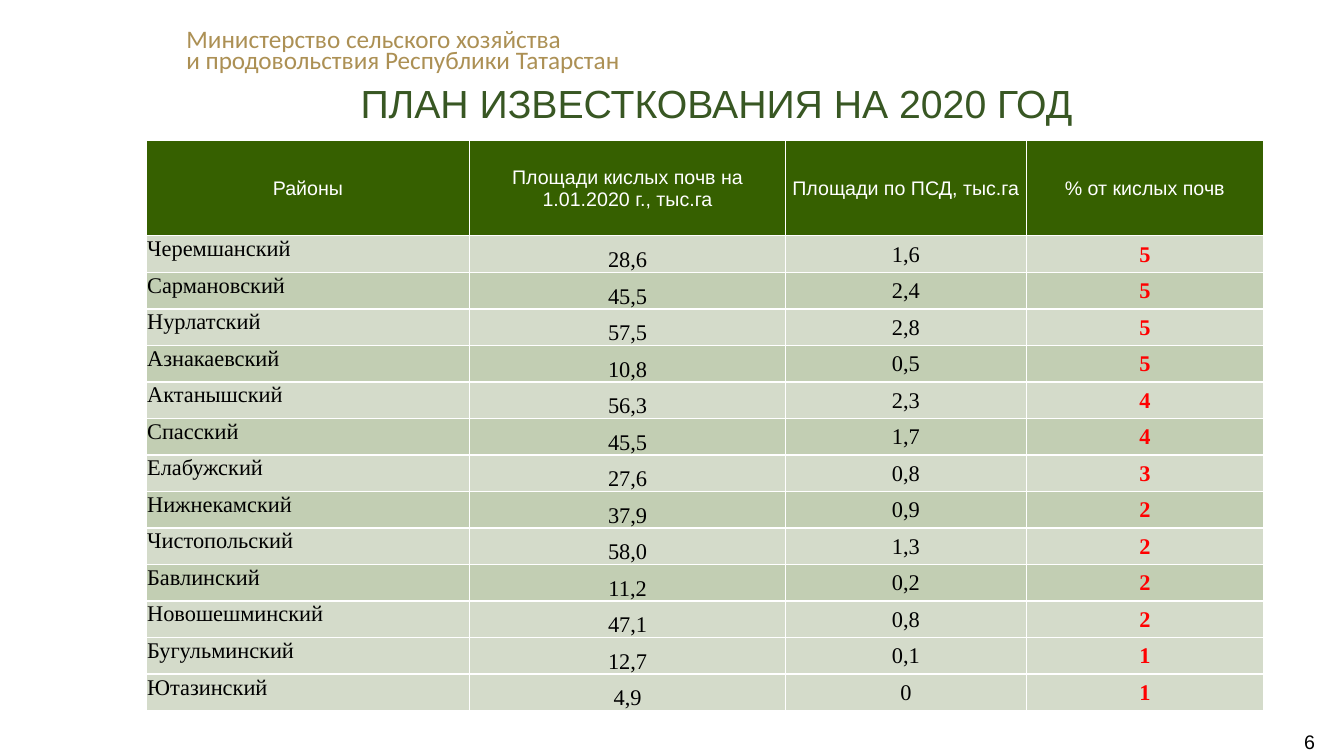
from dataclasses import dataclass

from lxml.etree import SubElement
from pptx import Presentation
from pptx.dml.color import RGBColor
from pptx.enum.text import MSO_ANCHOR, MSO_AUTO_SIZE, PP_ALIGN
from pptx.oxml.ns import qn
from pptx.util import Inches, Pt

COLORS = {
    "gold": "AC9054",
    "title": "385723",
    "header": "366000",
    "light": "D4DBCA",
    "dark": "C2CEB3",
    "white": "FFFFFF",
    "black": "000000",
    "red": "FF0000",
}


@dataclass(frozen=True)
class TextStyle:
    font: str
    size: int
    color: str
    bold: bool = False


@dataclass(frozen=True)
class Column:
    heading: str
    width: float
    style: TextStyle
    align: PP_ALIGN
    anchor: MSO_ANCHOR


@dataclass(frozen=True)
class District:
    name: str
    acid_area: str
    planned_area: str
    percent: str


MINISTRY_STYLE = TextStyle("Calibri", 18, "gold")
TITLE_STYLE = TextStyle("Arial", 28, "title")
HEADING_STYLE = TextStyle("Arial", 14, "white")
NUMBER_STYLE = TextStyle("Arial", 14, "black")
BODY_STYLE = TextStyle("Times New Roman", 16, "black")
PERCENT_STYLE = TextStyle("Times New Roman", 16, "red", True)

COLUMNS = [
    Column("Районы", 3.21, BODY_STYLE, PP_ALIGN.LEFT, MSO_ANCHOR.TOP),
    Column("Площади кислых почв на 1.01.2020 г., тыс.га", 3.13, BODY_STYLE,
           PP_ALIGN.CENTER, MSO_ANCHOR.BOTTOM),
    Column("Площади по ПСД, тыс.га", 2.39, BODY_STYLE, PP_ALIGN.CENTER, MSO_ANCHOR.MIDDLE),
    Column("% от кислых почв", 2.35, PERCENT_STYLE, PP_ALIGN.CENTER, MSO_ANCHOR.MIDDLE),
]
DISTRICTS = [
    District("Черемшанский", "28,6", "1,6", "5"),
    District("Сармановский", "45,5", "2,4", "5"),
    District("Нурлатский", "57,5", "2,8", "5"),
    District("Азнакаевский", "10,8", "0,5", "5"),
    District("Актанышский", "56,3", "2,3", "4"),
    District("Спасский", "45,5", "1,7", "4"),
    District("Елабужский", "27,6", "0,8", "3"),
    District("Нижнекамский", "37,9", "0,9", "2"),
    District("Чистопольский", "58,0", "1,3", "2"),
    District("Бавлинский", "11,2", "0,2", "2"),
    District("Новошешминский", "47,1", "0,8", "2"),
    District("Бугульминский", "12,7", "0,1", "1"),
    District("Ютазинский", "4,9", "0", "1"),
]
BANDED_ROWS = 10
TABLE_HEIGHT = 5.66
HEADING_HEIGHT = 0.95


def add_span(para, text: str, style: TextStyle):
    span = para.add_run()
    span.text = text
    span.font.name = style.font
    span.font.size = Pt(style.size)
    span.font.bold = style.bold
    span.font.color.rgb = RGBColor.from_string(COLORS[style.color])
    return span


def set_margins(frame, left: float, top: float, right: float, bottom: float) -> None:
    frame.margin_left, frame.margin_top = Inches(left), Inches(top)
    frame.margin_right, frame.margin_bottom = Inches(right), Inches(bottom)


def add_borders(cell) -> None:
    properties = cell._tc.get_or_add_tcPr()
    for side in ("lnL", "lnR", "lnT", "lnB"):
        line = SubElement(properties, qn(f"a:{side}"), w=str(Pt(1)))
        fill = SubElement(line, qn("a:solidFill"))
        SubElement(fill, qn("a:srgbClr"), val=COLORS["white"])


def fill_cell(cell, text: str, style: TextStyle, align: PP_ALIGN,
              anchor: MSO_ANCHOR, color: str) -> None:
    add_borders(cell)
    cell.fill.solid()
    cell.fill.fore_color.rgb = RGBColor.from_string(COLORS[color])
    cell.vertical_anchor = anchor
    set_margins(cell, 0.01, 0.01, 0.01, 0)
    para = cell.text_frame.paragraphs[0]
    para.alignment = align
    add_span(para, text, style)


def add_ministry(page) -> None:
    box = page.shapes.add_textbox(Inches(1.75), Inches(0.26), Inches(4.55), Inches(0.54))
    frame = box.text_frame
    frame.word_wrap = False
    frame.auto_size = MSO_AUTO_SIZE.SHAPE_TO_FIT_TEXT
    lines = ["Министерство сельского хозяйства", "и продовольствия Республики Татарстан"]
    for index, text in enumerate(lines):
        para = frame.add_paragraph() if index else frame.paragraphs[0]
        para.line_spacing = 0.7
        add_span(para, text, MINISTRY_STYLE)


def add_title(page) -> None:
    title = page.shapes.title
    title.left, title.top = Inches(1.45), Inches(0.71)
    title.width, title.height = Inches(11.31), Inches(0.76)
    frame = title.text_frame
    frame.word_wrap = True
    frame.auto_size = MSO_AUTO_SIZE.NONE
    frame.vertical_anchor = MSO_ANCHOR.MIDDLE
    set_margins(frame, 0.1, 0, 0.1, 0)
    para = frame.paragraphs[0]
    para.alignment = PP_ALIGN.CENTER
    para.line_spacing = Pt(24)
    add_span(para, "ПЛАН ИЗВЕСТКОВАНИЯ НА 2020 ГОД", TITLE_STYLE)


def add_plan_table(page) -> None:
    table = page.shapes.add_table(
        len(DISTRICTS) + 1, len(COLUMNS),
        Inches(1.45), Inches(1.39), Inches(11.08), Inches(TABLE_HEIGHT),
    ).table
    table.rows[0].height = Inches(HEADING_HEIGHT)
    for index, column in enumerate(COLUMNS):
        table.columns[index].width = Inches(column.width)
        fill_cell(table.cell(0, index), column.heading, HEADING_STYLE,
                  PP_ALIGN.CENTER, MSO_ANCHOR.MIDDLE, "header")
    for row, district in enumerate(DISTRICTS, start=1):
        table.rows[row].height = Inches((TABLE_HEIGHT - HEADING_HEIGHT) / len(DISTRICTS))
        color = "dark" if row % 2 == 0 and row <= BANDED_ROWS else "light"
        values = (district.name, district.acid_area, district.planned_area, district.percent)
        for index, (column, value) in enumerate(zip(COLUMNS, values)):
            fill_cell(table.cell(row, index), value, column.style,
                      column.align, column.anchor, color)


def add_page_number(page) -> None:
    box = page.shapes.add_textbox(Inches(12.86), Inches(7.24), Inches(0.26), Inches(0.23))
    frame = box.text_frame
    frame.word_wrap = False
    set_margins(frame, 0, 0, 0, 0)
    para = frame.paragraphs[0]
    para.alignment = PP_ALIGN.CENTER
    add_span(para, "6", NUMBER_STYLE)


def main() -> None:
    deck = Presentation()
    deck.slide_width, deck.slide_height = Inches(13.33), Inches(7.5)
    page = deck.slides.add_slide(deck.slide_layouts.get_by_name("Title Only"))
    add_ministry(page)
    add_title(page)
    add_plan_table(page)
    add_page_number(page)
    deck.save("out.pptx")


if __name__ == "__main__":
    main()
